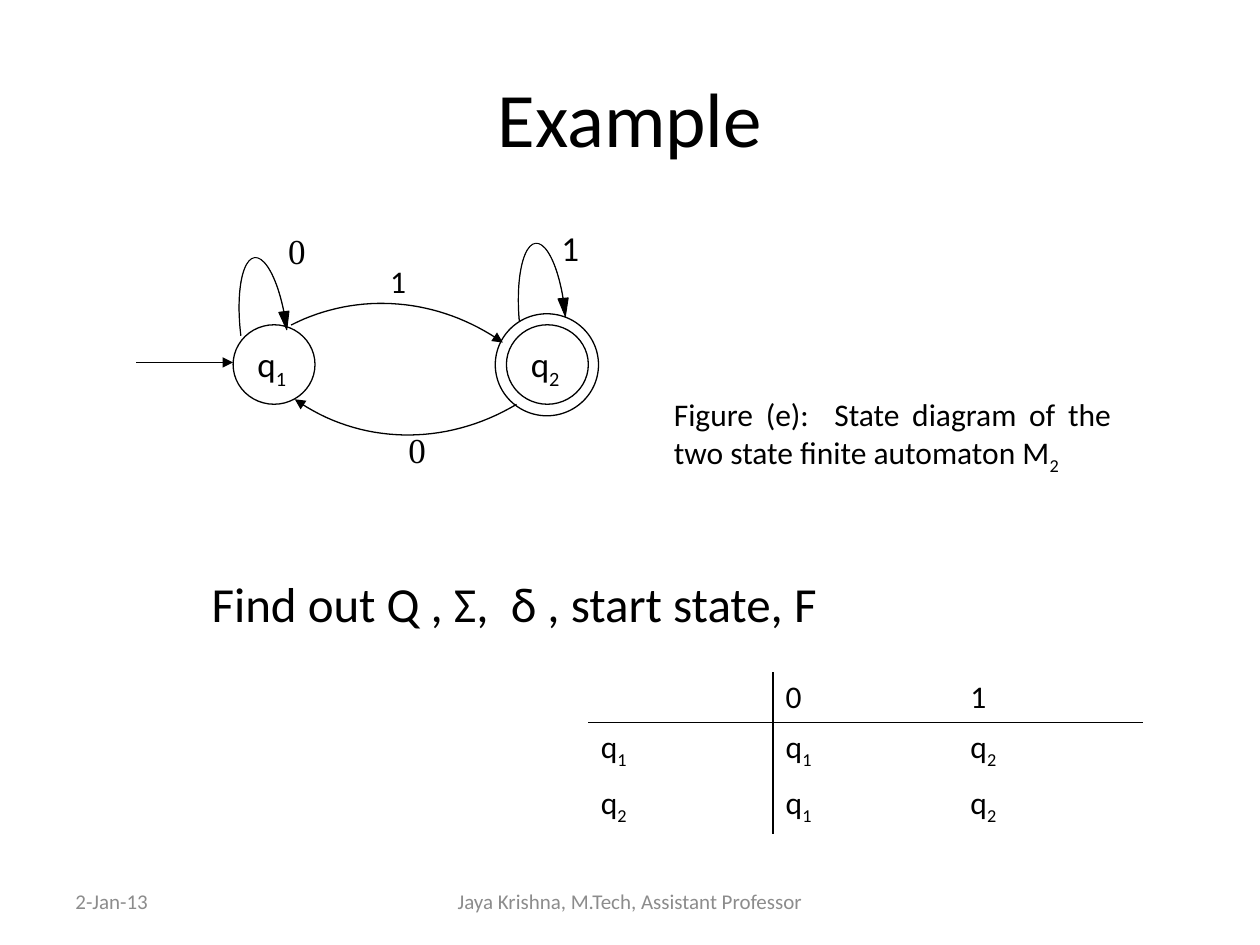
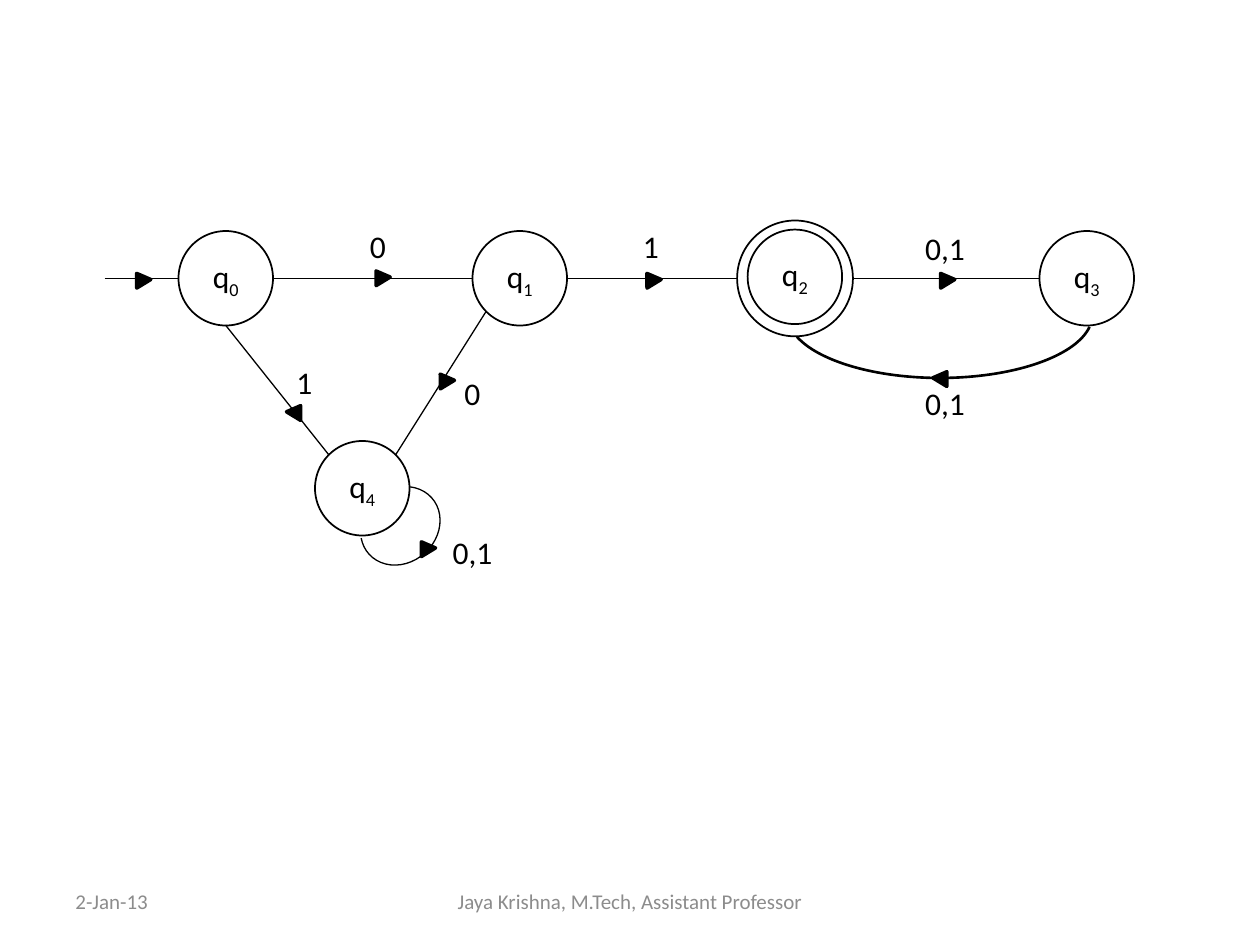
"""Build two slides of finite automaton state diagrams."""
from dataclasses import dataclass
from typing import NamedTuple

from lxml.etree import SubElement
from pptx import Presentation
from pptx.dml.color import RGBColor
from pptx.enum.shapes import MSO_CONNECTOR, MSO_SHAPE
from pptx.enum.text import MSO_ANCHOR, PP_ALIGN
from pptx.oxml.ns import qn
from pptx.util import Pt


@dataclass(frozen=True)
class Theme:
    """Colours, fonts and type sizes of the deck."""
    ink: RGBColor = RGBColor(0x00, 0x00, 0x00)
    paper: RGBColor = RGBColor(0xFF, 0xFF, 0xFF)
    muted: RGBColor = RGBColor(0x8C, 0x8C, 0x8C)
    sans: str = "Calibri"
    serif: str = "Times New Roman"
    title: float = 44
    question: float = 28
    large: float = 20
    body: float = 18
    footer: float = 12


THEME = Theme()


class Box(NamedTuple):
    """A rectangle in points."""
    left: float
    top: float
    width: float
    height: float

    def lengths(self) -> list:
        """Return the four measures as lengths."""
        return [Pt(value) for value in self]


@dataclass(frozen=True)
class Style:
    """How a text is set."""
    size: float = THEME.body
    font: str = THEME.sans
    color: RGBColor = THEME.ink
    align: PP_ALIGN = PP_ALIGN.LEFT
    anchor: MSO_ANCHOR = MSO_ANCHOR.TOP
    after: float = 0


class Label(NamedTuple):
    """A text at a place; an underscore starts a subscript."""
    text: str
    box: Box
    style: Style


CENTER = Style(align=PP_ALIGN.CENTER)
TITLE = Style(THEME.title, align=PP_ALIGN.CENTER, anchor=MSO_ANCHOR.MIDDLE)
DATE = Style(THEME.footer, color=THEME.muted, anchor=MSO_ANCHOR.MIDDLE)
AUTHOR = Style(THEME.footer, color=THEME.muted, align=PP_ALIGN.CENTER, anchor=MSO_ANCHOR.MIDDLE)
STATE_LARGE = Style(THEME.large, after=10)
STATE = Style(align=PP_ALIGN.CENTER, anchor=MSO_ANCHOR.MIDDLE)
EDGE = Style(align=PP_ALIGN.CENTER, after=10)
EDGE_LARGE = Style(THEME.large, align=PP_ALIGN.CENTER, after=10)
EDGE_SERIF = Style(THEME.large, THEME.serif, align=PP_ALIGN.CENTER, after=10)

FOOTERS = [
    Label("2-Jan-13", Box(36, 500.4, 168, 28.8), DATE),
    Label("Jaya Krishna, M.Tech, Assistant Professor", Box(246, 500.4, 228, 28.8), AUTHOR),
]


def write(frame, text: str, style: Style) -> None:
    """Write one paragraph into a text frame."""
    frame.word_wrap = True
    frame.vertical_anchor = style.anchor
    para = frame.paragraphs[0]
    para.alignment = style.align
    para.space_after = Pt(style.after)
    para.font.size, para.font.name = Pt(style.size), style.font
    para.font.color.rgb = style.color
    base, _, subscript = text.partition("_")
    para.add_run().text = base
    if subscript:
        span = para.add_run()
        span.text = subscript
        span._r.get_or_add_rPr().set("baseline", "-25000")


def add_label(page, label: Label) -> None:
    """Add a text box."""
    shape = page.shapes.add_textbox(*label.box.lengths())
    write(shape.text_frame, label.text, label.style)


def add_panel(page, label: Label) -> None:
    """Add a text on a plain rectangle in the paper colour."""
    panel = add_outline(page, MSO_SHAPE.RECTANGLE, label.box, 0, THEME.paper)
    panel.line.fill.background()
    write(panel.text_frame, label.text, label.style)


def add_outline(page, kind: MSO_SHAPE, box: Box, weight: float, fill=None,
                rotation: float = 0, adjustments: tuple = ()):
    """Add a preset shape with a black outline."""
    shape = page.shapes.add_shape(kind, *box.lengths())
    shape.shadow.inherit = False
    shape.rotation = rotation
    for index, value in enumerate(adjustments):
        shape.adjustments[index] = value
    if fill is None:
        shape.fill.background()
    else:
        shape.fill.solid()
        shape.fill.fore_color.rgb = fill
    draw_line(shape, weight)
    return shape


def draw_line(shape, weight: float, arrow: bool = False) -> None:
    """Set a black line, with an arrowhead at its end if wanted."""
    shape.line.color.rgb = THEME.ink
    shape.line.width = Pt(weight)
    if arrow:
        SubElement(shape.line._get_or_add_ln(), qn("a:tailEnd"), type="triangle")


def add_state(page, box: Box, weight: float, name: str = "", style: Style = STATE) -> None:
    """Add a state circle, named or empty."""
    circle = add_outline(page, MSO_SHAPE.OVAL, box, weight, THEME.paper)
    if name:
        write(circle.text_frame, name, style)


def add_edge(page, start: tuple, end: tuple, arrow: bool = False) -> None:
    """Add a straight edge."""
    edge = page.shapes.add_connector(MSO_CONNECTOR.STRAIGHT, *map(Pt, start + end))
    SubElement(edge._element.spPr, qn("a:effectLst"))
    draw_line(edge, 0.75, arrow)


def add_curve(page, *controls: tuple, steps: int = 32) -> None:
    """Add an arrow along a cubic Bézier curve."""
    points = []
    for step in range(steps + 1):
        t = step / steps
        weights = ((1 - t) ** 3, 3 * t * (1 - t) ** 2, 3 * t ** 2 * (1 - t), t ** 3)
        points.append(tuple(
            Pt(sum(weight * value for weight, value in zip(weights, axis)))
            for axis in zip(*controls)))
    builder = page.shapes.build_freeform(*points[0])
    builder.add_line_segments(points[1:], close=False)
    curve = builder.convert_to_shape()
    curve.shadow.inherit = False
    curve.fill.background()
    draw_line(curve, 0.75, arrow=True)


def add_marker(page, left: float, top: float, rightward: bool) -> None:
    """Add a small solid triangle that shows the direction of an edge."""
    rotation, apex = (328.7, 0.46) if rightward else (31.3, 0.54)
    add_outline(page, MSO_SHAPE.ISOSCELES_TRIANGLE, Box(left, top, 9.4, 7.2), 2,
                THEME.ink, rotation, (apex,))


def set_borders(cell, ruled: set) -> None:
    """Draw the ruled sides of a table cell and clear the others."""
    for side in "LRTB":
        line = SubElement(cell._tc.get_or_add_tcPr(), qn(f"a:ln{side}"), w=str(Pt(1)))
        if side in ruled:
            SubElement(SubElement(line, qn("a:solidFill")), qn("a:srgbClr"), val=str(THEME.ink))
        else:
            SubElement(line, qn("a:noFill"))


def add_transitions(page, rows: list) -> None:
    """Add the transition table, ruled after its first row and column."""
    column_width, row_height = 105.6, 26.6
    box = Box(336.2, 384, column_width * len(rows[0]), row_height * len(rows))
    table = page.shapes.add_table(len(rows), len(rows[0]), *box.lengths()).table
    table.first_row = table.horz_banding = False
    style_id = table._tbl.tblPr.find(qn("a:tableStyleId"))
    style_id.text = "{2D5ABB26-0587-4C30-8999-92F81FD0307C}"
    for column in table.columns:
        column.width = Pt(column_width)
    for row_index, row in enumerate(rows):
        table.rows[row_index].height = Pt(row_height)
        for column_index, text in enumerate(row):
            cell = table.cell(row_index, column_index)
            set_borders(cell, {*"RL"[column_index:column_index + 1][:1],
                               *"BT"[row_index:row_index + 1]})
            cell.fill.background()
            write(cell.text_frame, text, Style())


def add_page(deck):
    """Add a blank page with the footers."""
    page = deck.slides.add_slide(deck.slide_layouts[6])
    for footer in FOOTERS:
        add_label(page, footer)
    return page


def build_example(deck) -> None:
    """Build the two-state automaton with its table."""
    page = add_page(deck)
    add_label(page, Label("Example", Box(36, 21.6, 648, 90), TITLE))
    add_label(page, Label("Find out Q , Σ,  δ , start state, F",
                          Box(113.8, 324, 401.8, 41), Style(THEME.question)))
    for label in (
        Label("1", Box(309.6, 126, 32.4, 29.5), EDGE_LARGE),
        Label("0", Box(153.4, 127.4, 32.4, 29.5), EDGE_SERIF),
        Label("1", Box(208.8, 146.2, 37.4, 34.6), EDGE),
        Label("0", Box(219.6, 241.2, 37.4, 34.6), EDGE_SERIF),
        Label("Figure (e):  State diagram of the two state finite automaton M_2",
              Box(378, 222.2, 264.2, 54), Style(align=PP_ALIGN.JUSTIFY)),
    ):
        add_panel(page, label)
    add_state(page, Box(283, 179.3, 59, 58.3), 0.75)
    for name, left in (("q_1", 133.2), ("q_2", 289.4)):
        add_state(page, Box(left, 185.6, 46.8, 45.4), 0.75, name, STATE_LARGE)
    add_curve(page, (166.3, 185.8), (204.5, 166.3), (250.6, 169.9), (287.3, 195.8))
    add_curve(page, (295.2, 231.1), (254.2, 255.6), (205.2, 254.2), (168.5, 228.2))
    for left, top, rotation in ((134.8, 146.9, 353), (294.7, 138.8, 355)):
        add_outline(page, MSO_SHAPE.CURVED_DOWN_ARROW, Box(left, top, 29.5, 43.2), 0.5,
                    THEME.ink, rotation, (0.006, 0.2, 0.355))
    add_edge(page, (77.8, 207.1), (133.2, 207.1), arrow=True)
    add_transitions(page, [["", "0", "1"], ["q_1", "q_1", "q_2"], ["q_2", "q_1", "q_2"]])


def build_five_states(deck) -> None:
    """Build the five-state automaton."""
    page = add_page(deck)
    add_state(page, Box(421.2, 126, 66.2, 66.2), 1)
    for name, left, top in (("q_0", 102, 132), ("q_1", 270, 132), ("q_2", 427.2, 131.2),
                            ("q_3", 594, 132), ("q_4", 180, 252)):
        add_state(page, Box(left, top, 54, 54), 1, name)
    for text, left, top, width in (
        ("0", 198, 126, 36), ("1", 156, 203.8, 36), ("0", 252, 210.2, 36),
        ("1", 354, 126, 36), ("0,1", 516, 127.4, 48.2),
        ("0,1", 516, 216, 48.2), ("0,1", 246, 301, 48.2),
    ):
        add_label(page, Label(text, Box(left, top, width, 29), CENTER))
    add_outline(page, MSO_SHAPE.ARC, Box(450, 144, 174.2, 72), 1.5,
                adjustments=(2.73, 102.8))
    add_outline(page, MSO_SHAPE.ARC, Box(204.7, 279.6, 48.2, 41.8), 0.75,
                rotation=317.8, adjustments=(194.94, 122.91))
    axis = 159.1
    for start, end in ((59.8, 101.5), (156.2, 270), (324, 421.2), (487.4, 594)):
        add_edge(page, (start, axis), (end, axis))
    add_edge(page, (277.9, 177.8), (226.1, 259.9))
    add_edge(page, (128.9, 185.8), (187.9, 259.9))
    for left, top in ((75.6, 155.5), (212.4, 154.1), (367.2, 155.5), (535, 155.5),
                      (249.1, 213.1), (238.3, 308.9)):
        add_marker(page, left, top, rightward=True)
    for left, top in ((534.2, 211.7), (164.9, 231.1)):
        add_marker(page, left, top, rightward=False)


def main() -> None:
    """Build and save the deck."""
    deck = Presentation()
    deck.slide_width, deck.slide_height = Pt(720), Pt(540)
    build_example(deck)
    build_five_states(deck)
    deck.save("out.pptx")


if __name__ == "__main__":
    main()
